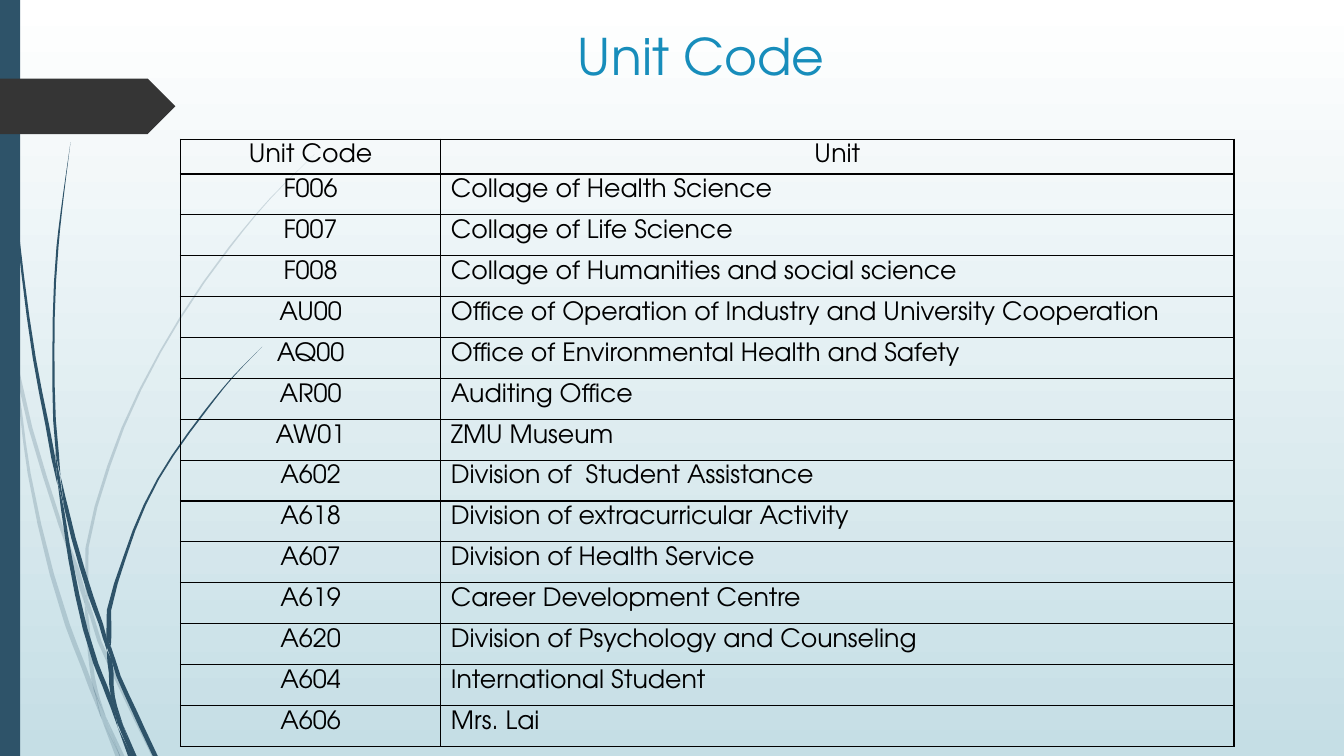
from typing import Any, NamedTuple

from lxml import etree
from pptx import Presentation
from pptx.dml.color import RGBColor
from pptx.enum.shapes import MSO_SHAPE
from pptx.enum.text import MSO_ANCHOR, PP_ALIGN
from pptx.oxml import parse_xml
from pptx.oxml.ns import qn
from pptx.util import Cm, Pt

RECT, TAG = MSO_SHAPE.RECTANGLE, MSO_SHAPE.PENTAGON
MID, LEFT = PP_ALIGN.CENTER, PP_ALIGN.LEFT
TOP = MSO_ANCHOR.TOP
FACE = "TeX Gyre Adventor"
NAVY, DARK, BLUE, BLACK = "2E5369", "353535", "178DBB", "000000"
SKY = ("FFFFFF", "C5DEE5")
NS = "http://schemas.openxmlformats.org/drawingml/2006/main"
STEPS = 3


class Spot(NamedTuple):
    """A point on the centre line of a blade, in inches."""
    x: float
    y: float
    wide: float


class Block(NamedTuple):
    kind: Any
    box: tuple[float, float, float, float]
    tone: str


# Blades of grass from top to foot: x, y and breadth
PALE = [
    [(0, 2.82, 0), (.02, 2.99, .04), (.07, 3.22, .04), (.11, 3.5, 0)],
    [(.14, 3.45, 0), (.19, 3.76, .04), (.6, 5.21, .04), (.82, 5.86, .05),
     (.84, 5.99, 0)],
    [(.88, 5.96, 0), (.9, 6.08, .04), (1.25, 6.93, .04), (1.53, 7.5, .05)],
    [(1.05, 7.11, 0), (1.21, 7.5, .05)],
    [(.11, 3.5, 0), (.16, 3.76, .02), (.29, 4.7, .03), (.67, 6.2, .05),
     (.91, 6.83, .05), (1.01, 7.14, 0)],
    [(.84, 5.99, 0), (.86, 6.1, .03), (.89, 6.46, .04), (.95, 6.85, .04),
     (1.05, 7.11, 0)],
    [(3.12, 1.53, 0), (2.68, 1.97, .01), (2.28, 2.45, .02), (1.59, 3.49, .02),
     (1.08, 4.62, .03), (.86, 5.84, .03), (.88, 5.96, 0)],
    [(1.01, 7.14, 0), (1.17, 7.5, .05)],
    [(.85, 5.86, 0), (.86, 5.98, .04), (.88, 6.1, 0)],
    [(.93, 6.83, 0), (1.02, 7.1, .05), (1.19, 7.5, 0)],
]
BOLD = [
    [(.03, 0, .01), (.05, .48, .01), (.07, 1.1, .01), (.18, 2.33, .02),
     (.34, 3.55, .03), (.53, 4.55, .04), (.57, 4.81, 0)],
    [(.6, 4.72, 0), (.66, 5.05, .04), (.9, 5.91, .05), (1.04, 6.33, .04),
     (1.06, 6.45, 0)],
    [(1.1, 6.41, 0), (1.12, 6.53, .04), (1.34, 7.07, .05), (1.54, 7.5, .05)],
    [(.57, 4.77, 0), (.62, 5.05, .03), (.7, 5.56, .04), (.95, 6.58, .05),
     (1.08, 6.91, .05), (1.17, 7.22, 0)],
    [(.7, 1.41, 0), (.63, 1.93, .01), (.57, 2.45, .02), (.53, 3.49, .02),
     (.57, 4.51, .03), (.6, 4.72, 0)],
    [(1.22, 7.19, 0), (1.34, 7.5, .03)],
    [(.55, 4.49, 0), (.58, 4.74, .03), (.64, 5.05, 0)],
    [(2.6, 3.44, 0), (2.31, 3.74, .01), (2.05, 4.06, .02), (1.57, 4.75, .02),
     (1.24, 5.52, .03), (1.08, 6.32, .05), (1.1, 6.41, 0)],
    [(1.17, 7.22, 0), (1.29, 7.5, .04)],
    [(1.06, 6.45, 0), (1.09, 6.56, .05), (1.12, 6.91, .04), (1.22, 7.19, 0)],
    [(1.06, 6.31, 0), (1.08, 6.42, .04), (1.11, 6.56, 0)],
    [(1.1, 6.91, 0), (1.19, 7.18, .05), (1.32, 7.5, .03)],
]
BLOCKS = [Block(RECT, (0, 0, .2, 7.5), NAVY),
          Block(TAG, (0, .78, 1.74, .55), DARK)]
UNITS = [
    ("Unit Code", "Unit"),
    ("F006", "Collage of Health Science"),
    ("F007", "Collage of Life Science"),
    ("F008", "Collage of Humanities and social science"),
    ("AU00", "Office of Operation of Industry and University Cooperation"),
    ("AQ00", "Office of Environmental Health and Safety"),
    ("AR00", "Auditing Office"),
    ("AW01", "ZMU Museum"),
    ("A602", "Division of  Student Assistance"),
    ("A618", "Division of extracurricular Activity"),
    ("A607", "Division of Health Service"),
    ("A619", "Career Development Centre"),
    ("A620", "Division of Psychology and Counseling"),
    ("A604", "International Student"),
    ("A606", "Mrs. Lai"),
]
CELL = {"margin_top": Cm(.13), "margin_bottom": 0, "margin_left": Cm(.26),
        "margin_right": Cm(.26), "vertical_anchor": TOP}


def inch(size: float) -> Cm:
    return Cm(size * 2.54)


def tint(hue: str) -> RGBColor:
    return RGBColor.from_string(hue)


def apply(item: Any, values: dict[str, Any]) -> None:
    for name, value in values.items():
        setattr(item, name, value)


def paint(shape: Any, hue: str, alpha: int = 100) -> None:
    shape.shadow.inherit = False
    shape.fill.solid()
    shape.fill.fore_color.rgb = tint(hue)
    shape.line.fill.background()
    if alpha < 100:
        tone = shape.fill._xPr.find(".//" + qn("a:srgbClr"))
        etree.SubElement(tone, qn("a:alpha"), val=str(alpha * 1000))


def write(frame: Any, text: str, size: int, hue: str, align: Any) -> None:
    para = frame.paragraphs[0]
    para.alignment = align
    run = para.add_run()
    run.text = text
    apply(run.font, {"name": FACE, "size": Pt(size), "bold": False})
    run.font.color.rgb = tint(hue)


def smooth(spots: list[Spot]) -> list[Spot]:
    """Run a cubic curve down through the spots."""
    if len(spots) < 3:
        return spots
    gaps = [b.y - a.y for a, b in zip(spots, spots[1:])]
    leans = [(b.x - a.x) / gap for a, b, gap in zip(spots, spots[1:], gaps)]
    inner = [(m * h + n * g) / (g + h)
             for m, n, g, h in zip(leans, leans[1:], gaps, gaps[1:])]
    slopes = [leans[0], *inner, leans[-1]]
    curve = []
    for a, b, m, n, gap in zip(spots, spots[1:], slopes, slopes[1:], gaps):
        for step in range(STEPS):
            t = step / STEPS
            u = 1 - t
            x = (u * u * (1 + 2 * t) * a.x + t * t * (3 - 2 * t) * b.x
                 + gap * t * u * (u * m - t * n))
            curve.append(Spot(x, a.y + t * gap, u * a.wide + t * b.wide))
    return curve + [spots[-1]]


def grow(shapes: Any, blade: list[tuple], alpha: int) -> None:
    curve = smooth([Spot(*point) for point in blade])
    edge = [(s.x - s.wide / 2, s.y) for s in curve]
    edge += [(s.x + s.wide / 2, s.y) for s in reversed(curve) if s.wide]
    spots = [(inch(x), inch(y)) for x, y in edge]
    form = shapes.build_freeform(*spots[0])
    form.add_line_segments(spots[1:], close=True)
    paint(form.convert_to_shape(), NAVY, alpha)


def frame_cell(cell: Any) -> None:
    props = cell._tc.get_or_add_tcPr()
    for side in "LRTB":
        props.append(parse_xml(
            f'<a:ln{side} xmlns:a="{NS}" w="12700"><a:solidFill>'
            f'<a:srgbClr val="{BLACK}"/></a:solidFill></a:ln{side}>'))
    cell.fill.background()


def list_units(shapes: Any) -> None:
    box = map(inch, (1.79, 1.38, 10.45, 6.02))
    grid = shapes.add_table(len(UNITS), 2, *box).table
    apply(grid, {"first_row": False, "horz_banding": False})
    for col, width in zip(grid.columns, (2.58, 7.87)):
        col.width = inch(width)
    for i, texts in enumerate(UNITS):
        grid.rows[i].height = Cm(1.03 if i else .88)
        for j, text in enumerate(texts):
            cell = grid.cell(i, j)
            apply(cell, CELL)
            frame_cell(cell)
            write(cell.text_frame, text, 18, BLACK, LEFT if i and j else MID)


def main() -> None:
    deck = Presentation()
    apply(deck, {"slide_width": inch(13.33), "slide_height": inch(7.5)})
    slide = deck.slides.add_slide(deck.slide_layouts[5])

    # Background
    fill = slide.background.fill
    fill.gradient()
    fill.gradient_angle = 270
    for stop, hue, spot in zip(fill.gradient_stops, SKY, (0, 1)):
        stop.color.rgb = tint(hue)
        stop.position = spot

    # Grass, side bar and tag
    for blades, alpha in ((PALE, 20), (BOLD, 100)):
        for blade in blades:
            grow(slide.shapes, blade, alpha)
    for block in BLOCKS:
        shape = slide.shapes.add_shape(block.kind, *map(inch, block.box))
        paint(shape, block.tone)

    # Title
    title = slide.shapes.title
    apply(title, {"left": inch(2.15), "top": inch(.2),
                  "width": inch(9.75), "height": inch(.99)})
    apply(title.text_frame, {"vertical_anchor": TOP, "word_wrap": True})
    write(title.text_frame, "Unit Code ", 36, BLUE, MID)

    # Table
    list_units(slide.shapes)
    deck.save("out.pptx")


if __name__ == "__main__":
    main()
